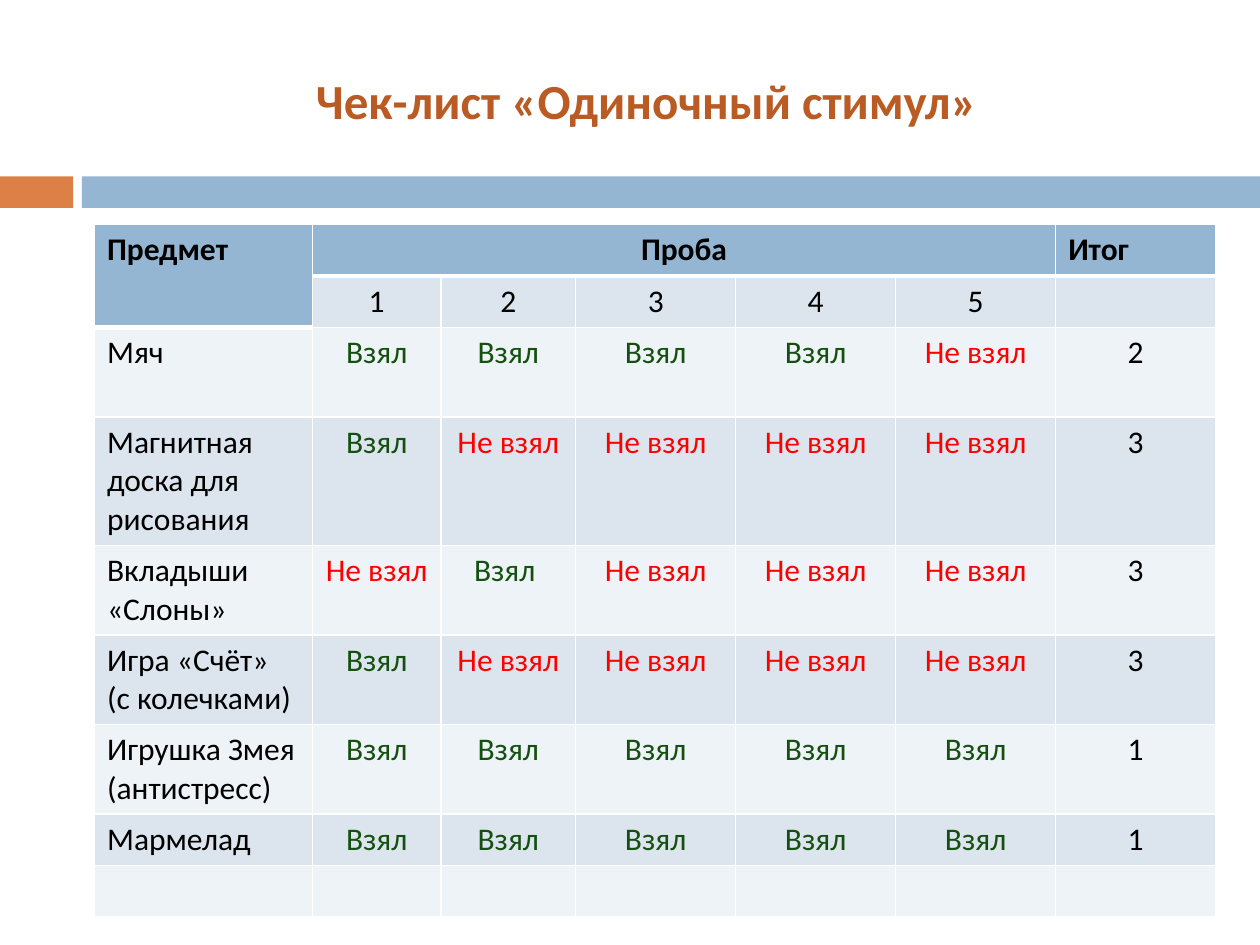
from pptx import Presentation
from pptx.util import Inches, Pt
from pptx.dml.color import RGBColor
from pptx.enum.shapes import MSO_SHAPE as Shape
from pptx.enum.text import MSO_ANCHOR as Anchor, PP_ALIGN as Align
from pptx.oxml import parse_xml
from pptx.oxml.ns import nsdecls

# Content
TITLE = "Чек-лист «Одиночный стимул»"
YES, NO = "Взял", "Не взял"
HEAD = [
    ["Предмет", "Проба", "", "", "", "", "Итог"],
    ["", "1", "2", "3", "4", "5", ""],
]
ITEMS = [
    ["Мяч", YES, YES, YES, YES, NO, "2"],
    ["Магнитная доска для рисования", YES, NO, NO, NO, NO, "3"],
    ["Вкладыши «Слоны»", NO, YES + " ", NO, NO, NO, "3"],
    ["Игра «Счёт»\n(с колечками)", YES, NO, NO, NO, NO, "3"],
    ["Игрушка Змея\n(антистресс)", YES, YES, YES, YES, YES, "1"],
    ["Мармелад", YES, YES, YES, YES, YES, "1"],
    [""] * 7,
]
ROWS = HEAD + ITEMS
WIDTHS = [1.73, 1.02, 1.07] + [1.27] * 4
LOW, MID, TALL = 0.41, 0.71, 1.02
HEIGHTS = [LOW, LOW, MID, TALL, MID, MID, MID, LOW, LOW]
BARS = [(0, 0.58, "orange"), (0.65, 9.35, "blue")]

FONT = "Calibri"
COLORS = {
    "orange": "DD8047", "blue": "94B6D2", "title": "B95B22",
    "dark": "DCE5EE", "light": "EEF3F7", "line": "FFFFFF",
    "text": "000000", "yes": "155010", "no": "FF0000",
}


def color(name):
    return RGBColor.from_string(COLORS[name])


def style(para, size, hue, bold, align):
    para.alignment = align
    font = para.font
    font.name, font.size, font.bold = FONT, Pt(size), bold
    font.color.rgb = color(hue)


def is_head(row, col):
    return row == 0 or (row, col) == (1, 0)


def add_lines(cell, top, bottom):
    props = cell._tc.get_or_add_tcPr()
    for side, width in zip("LRTB", (1, 1, top, bottom)):
        props.append(parse_xml(
            f'<a:ln{side} {nsdecls("a")} w="{Pt(width)}"><a:solidFill>'
            f'<a:srgbClr val="{COLORS["line"]}"/></a:solidFill></a:ln{side}>'))


def fill_cell(cell, row, col, text):
    head = is_head(row, col)
    # A thick rule closes the heading cells
    top = 3 if row and is_head(row - 1, col) and (row, col) != (1, 0) else 1
    bottom = 3 if head and (row, col) != (0, 0) else 1
    add_lines(cell, top, bottom)
    cell.fill.solid()
    band = "dark" if row % 2 else "light"
    cell.fill.fore_color.rgb = color("blue" if head else band)
    cell.text = text
    hue = {YES: "yes", NO: "no"}.get(text.strip(), "text")
    left = col == 0 or (row, col) == (0, 6)
    for para in cell.text_frame.paragraphs:
        style(para, 18, hue, head, Align.LEFT if left else Align.CENTER)


deck = Presentation()
deck.slide_width, deck.slide_height = Inches(10), Inches(7.5)
slide = deck.slides.add_slide(deck.slide_layouts[6])
shapes = slide.shapes

# Bars under the title
for left, width, hue in BARS:
    bar = shapes.add_shape(Shape.RECTANGLE, Inches(left), Inches(1.4),
                           Inches(width), Inches(0.25))
    bar.shadow.inherit = False
    bar.fill.solid()
    bar.fill.fore_color.rgb = color(hue)
    bar.line.fill.background()

# Title
box = shapes.add_textbox(Inches(0.67), Inches(0.25), Inches(8.92), Inches(1.08))
frame = box.text_frame
frame.word_wrap = True
frame.vertical_anchor = Anchor.MIDDLE
frame.text = TITLE
style(frame.paragraphs[0], 28, "title", True, Align.CENTER)

# Checklist table
table = shapes.add_table(len(ROWS), len(WIDTHS), Inches(0.75), Inches(1.78),
                         Inches(sum(WIDTHS)), Inches(sum(HEIGHTS))).table
table.first_row = table.horz_banding = False
for col, width in zip(table.columns, WIDTHS):
    col.width = Inches(width)
for row, height in zip(table.rows, HEIGHTS):
    row.height = Inches(height)
for r, line in enumerate(ROWS):
    for c, text in enumerate(line):
        fill_cell(table.cell(r, c), r, c, text)
table.cell(0, 0).merge(table.cell(1, 0))
table.cell(0, 1).merge(table.cell(0, 5))

deck.save("out.pptx")
